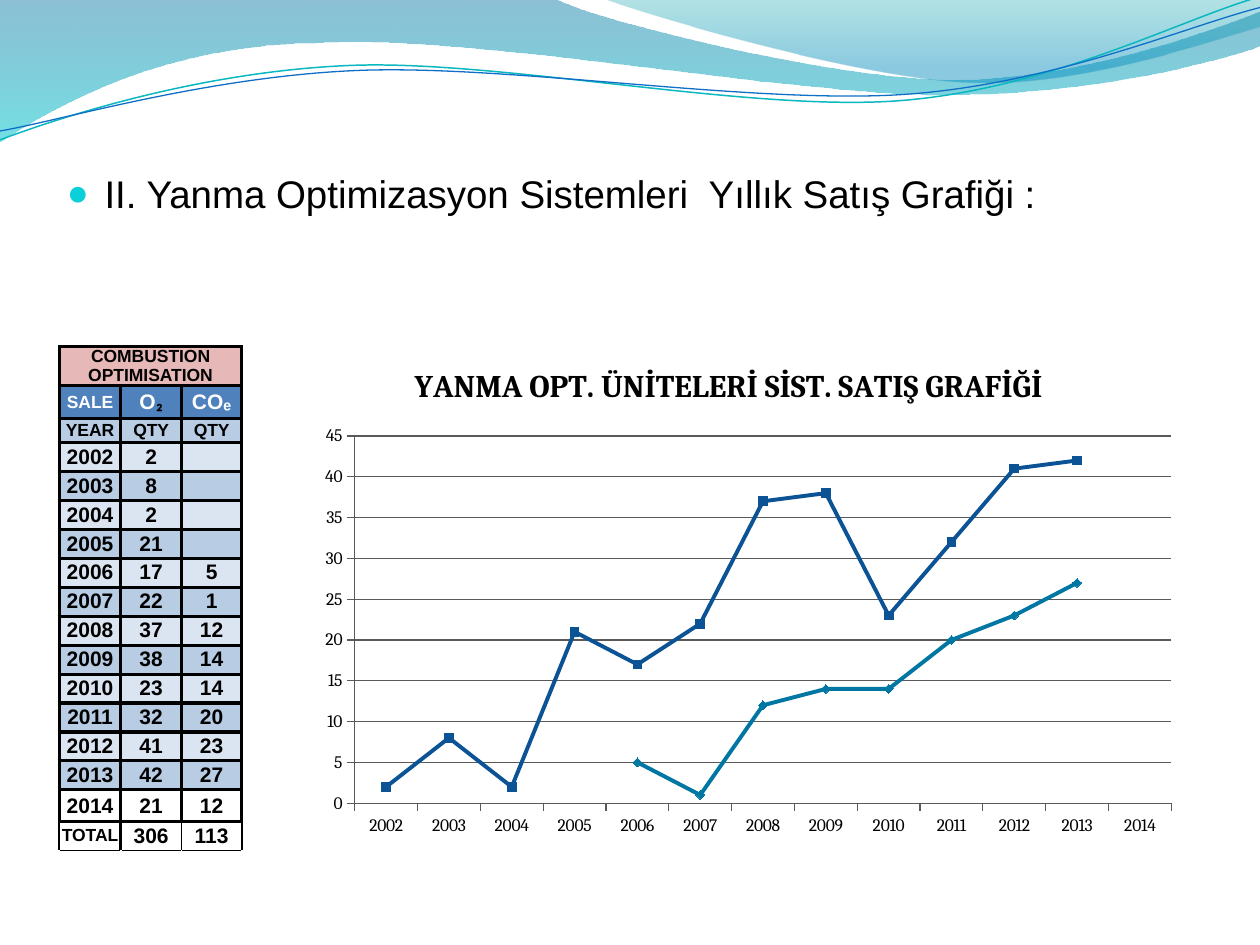
from dataclasses import dataclass
from math import cos, radians, sin

from lxml import etree
from pptx import Presentation
from pptx.chart.data import CategoryChartData
from pptx.dml.color import RGBColor
from pptx.enum.chart import XL_CHART_TYPE, XL_MARKER_STYLE, XL_TICK_MARK
from pptx.enum.text import MSO_ANCHOR, MSO_AUTO_SIZE, PP_ALIGN
from pptx.oxml.ns import qn
from pptx.util import Inches, Pt

LINE_MARKERS = XL_CHART_TYPE.LINE_MARKERS
SQUARE, DIAMOND = XL_MARKER_STYLE.SQUARE, XL_MARKER_STYLE.DIAMOND
OUTSIDE = XL_TICK_MARK.OUTSIDE
CENTER, TOP, MIDDLE = PP_ALIGN.CENTER, MSO_ANCHOR.TOP, MSO_ANCHOR.MIDDLE


@dataclass(frozen=True)
class Theme:
    font: str = "Arial"
    symbol_font: str = "Calibri"
    chart_font: str = "Cambria"
    text: str = "000000"
    white: str = "FFFFFF"
    bullet: str = "0BD0D9"
    pink: str = "E6B9B8"
    header: str = "4F81BD"
    band_dark: str = "B8CCE4"
    band_light: str = "DBE5F1"
    axis: str = "595959"
    series: tuple = ("0B5395", "0076A3")
    ribbons: tuple = ("0AB8BF", "0F6FC6")
    wave_left: tuple = ((0, "0074A1", 45), (1, "00C6CF", 55))
    wave_right: tuple = ((0, "00A1A9", 30), (0.8, "008BBF", 45))
    heading_size: int = 22
    chart_title_size: int = 18
    cell_size: int = 12
    small_size: int = 10
    empty_size: int = 8


def rgb(value):
    return RGBColor.from_string(value)


def sub(parent, tag, **attrs):
    return etree.SubElement(parent, qn(tag), attrs)


def pairs(segment):
    return list(zip(segment[::2], segment[1::2]))


def turn(segment, angle, cx, cy):
    """The points of a segment, turned around a centre."""
    c, d = cos(radians(angle)), sin(radians(angle))
    return [v for x, y in pairs(segment)
            for v in (cx + (x - cx) * c - (y - cy) * d, cy + (x - cx) * d + (y - cy) * c)]


class SlideBuilder:
    def __init__(self, slide, theme):
        self.s, self.theme = slide, theme

    def outline(self, segments, close):
        """Start point, then lines (x, y) and curves (x1, y1, x2, y2, x3, y3)."""
        ends = [tuple(map(Inches, seg[-2:])) for seg in segments]
        fb = self.s.shapes.build_freeform(*ends[0])
        fb.add_line_segments(ends[1:], close=close)
        sp = fb.convert_to_shape()
        sp.shadow.inherit = False
        lines = list(sp._element.iter(qn("a:lnTo")))
        for line, seg in zip(lines, segments[1:]):
            if len(seg) == 6:
                curve = etree.Element(qn("a:cubicBezTo"))
                for x, y in pairs(seg):
                    sub(curve, "a:pt", x=str(Inches(x) - sp.left), y=str(Inches(y) - sp.top))
                line.getparent().replace(line, curve)
        return sp

    def wave(self, segments, stops):
        sp = self.outline(segments, True)
        sp.line.fill.background()
        sp.fill.gradient()
        sp.fill.gradient_angle = 270
        for stop, (pos, color, _) in zip(sp.fill.gradient_stops, stops):
            stop.position = pos
            stop.color.rgb = rgb(color)
        for clr, (_, _, opacity) in zip(sp._element.spPr.iter(qn("a:srgbClr")), stops):
            sub(clr, "a:alpha", val=str(opacity * 1000))

    def ribbon(self, segments, color, width, center, tilt=2.7):
        sp = self.outline([turn(seg, tilt, *center) for seg in segments], False)
        sp.rotation = 360 - tilt
        sp.fill.background()
        sp.line.color.rgb = rgb(color)
        sp.line.width = Pt(width)

    def run(self, p, text, size, color, font=None, bold=False):
        r = p.add_run()
        r.text = text
        f = r.font
        f.name, f.size, f.bold = font or self.theme.font, Pt(size), bold
        f.color.rgb = rgb(color)

    def bullet(self, text, x, y, w, h):
        sp = self.s.placeholders[1]
        sp.left, sp.top, sp.width, sp.height = map(Inches, (x, y, w, h))
        tf = sp.text_frame
        tf.auto_size, tf.vertical_anchor = MSO_AUTO_SIZE.NONE, TOP
        tf.margin_top, tf.margin_bottom = Inches(0.28), 0
        p = tf.paragraphs[0]
        p.space_before = Pt(0)
        pPr = p._p.get_or_add_pPr()
        pPr.set("marL", str(Inches(0.3)))
        pPr.set("indent", str(-Inches(0.3)))
        sub(sub(pPr, "a:buClr"), "a:srgbClr", val=self.theme.bullet)
        sub(pPr, "a:buSzPct", val="95000")
        sub(pPr, "a:buFont", typeface=self.theme.font)
        sub(pPr, "a:buChar", char="●")
        self.run(p, text, self.theme.heading_size, self.theme.text)

    def table(self, x, y, cols, rows):
        frame = self.s.shapes.add_table(len(rows), len(cols), Inches(x), Inches(y),
                                        Inches(sum(cols)), Inches(sum(rows)))
        t = frame.table
        t.first_row = t.horz_banding = False
        for col, w in zip(t.columns, cols):
            col.width = Inches(w)
        for row, h in zip(t.rows, rows):
            row.height = Inches(h)
        for cell in t.iter_cells():
            cell.margin_left = cell.margin_right = cell.margin_top = cell.margin_bottom = 0
            cell.vertical_anchor = MIDDLE
            cell.fill.background()
            sub(cell.text_frame.paragraphs[0]._p, "a:endParaRPr",
                sz=str(self.theme.empty_size * 100))
        return t

    def borders(self, cell, **widths):
        tcPr = cell._tc.get_or_add_tcPr()
        for i, (side, width) in enumerate(widths.items()):
            ln = etree.Element(qn("a:ln" + side), w=str(Pt(width)))
            sub(sub(ln, "a:solidFill"), "a:srgbClr", val=self.theme.text)
            tcPr.insert(i, ln)

    def cell(self, cell, runs, fill=None, widths=(2, 2, 2, 2)):
        self.borders(cell, **dict(zip("LRTB", widths)))
        if fill:
            cell.fill.solid()
            cell.fill.fore_color.rgb = rgb(fill)
        p = cell.text_frame.paragraphs[0]
        p.alignment = CENTER
        for text, size, color, font in runs:
            self.run(p, text, size, color, font, True)

    def place(self, parent, **values):
        """Manual layout of a chart part, in fractions of the chart."""
        for old in parent.findall(qn("c:layout")):
            parent.remove(old)
        layout = etree.Element(qn("c:layout"))
        manual = sub(layout, "c:manualLayout")
        for tag, val in values.items():
            sub(manual, "c:" + tag, val=str(val))
        parent.insert(1 if parent.tag == qn("c:title") else 0, layout)

    def line_chart(self, title, cats, series, x, y, w, h):
        th, data = self.theme, CategoryChartData()
        data.categories = cats
        for name, vals in series:
            data.add_series(name, vals)
        ch = self.s.shapes.add_chart(LINE_MARKERS, *map(Inches, (x, y, w, h)), data).chart
        ch.has_legend = False
        ch.font.name, ch.font.size = th.chart_font, Pt(th.small_size)
        ch.font.color.rgb = rgb(th.text)
        self.run(ch.chart_title.text_frame.paragraphs[0], title, th.chart_title_size,
                 th.text, th.chart_font, True)
        self.place(ch.chart_title._element, xMode="edge", yMode="edge", x=0.15, y=0.03)
        self.place(ch._chartSpace.chart.plotArea, layoutTarget="inner", xMode="edge",
                   yMode="edge", x=0.09, y=0.182, w=0.904, h=0.725)
        val = ch.value_axis
        val.minimum_scale, val.maximum_scale, val.major_unit = 0, 45, 5
        for axis in (ch.category_axis, val):
            axis.major_tick_mark = OUTSIDE
        for fmt in (ch.category_axis.format, val.format, val.major_gridlines.format):
            fmt.line.color.rgb = rgb(th.axis)
            fmt.line.width = Pt(0.75)
        ch.plots[0].vary_by_categories = False
        for ser, color, style in zip(ch.plots[0].series, th.series, (SQUARE, DIAMOND)):
            ser.smooth = False
            ser.marker.style, ser.marker.size = style, 5
            ser.marker.format.fill.solid()
            ser.marker.format.fill.fore_color.rgb = rgb(color)
            for line in (ser.format.line, ser.marker.format.line):
                line.color.rgb = rgb(color)
            ser.format.line.width = Pt(2.25)


def main():
    prs = Presentation()
    prs.slide_width, prs.slide_height = Inches(10), Inches(7.5)
    s = prs.slides.add_slide(prs.slide_layouts[1])
    s.shapes.title._element.getparent().remove(s.shapes.title._element)
    th = Theme()
    b = SlideBuilder(s, th)

    # Decorative waves along the top
    b.wave([(0, -0.01), (4.4, -0.01), (4.76, 0.17, 6.64, 0.63, 7.58, 0.63), (8.53, 0.63, 9.58, 0.26, 10, 0.09),
            (10.01, 0.36), (9.83, 0.44, 8.7, 0.76, 7.46, 0.75), (6.22, 0.75, 3.82, 0.28, 2.57, 0.34),
            (1.29, 0.35, 0.46, 0.83, -0.01, 1.13)], th.wave_left)
    b.wave([(4.79, -0.01), (5.09, 0.11, 6.82, 0.62, 7.69, 0.65), (8.56, 0.69, 9.61, 0.32, 10, 0.21),
            (10, 0)], th.wave_right)
    b.ribbon([(0, 1.11), (0.48, 0.93, 1.58, 0.57, 2.77, 0.52), (3.95, 0.47, 5.93, 0.89, 7.13, 0.8),
              (8.33, 0.71, 9.38, 0.15, 9.98, -0.02)], th.ribbons[0], 0.85, (4.99, 0.58))
    b.ribbon([(0, 1.04), (0.47, 0.96, 1.64, 0.61, 2.83, 0.56), (4.03, 0.51, 5.97, 0.83, 7.17, 0.75),
              (8.36, 0.67, 9.41, 0.21, 10, 0.06)], th.ribbons[1], 0.75, (5, 0.59))

    # Heading
    b.bullet("II. Yanma Optimizasyon Sistemleri  Yıllık Satış Grafiği :", 0.43, 1.07, 9, 0.61)

    # Sales table, with an empty margin column and margin rows
    years = [str(year) for year in range(2002, 2015)]
    o2 = [2, 8, 2, 21, 17, 22, 37, 38, 23, 32, 41, 42, 21]
    co = [None] * 4 + [5, 1, 12, 14, 14, 20, 23, 27, 12]
    t = b.table(0.27, 2.57, [0.2, 0.49, 0.48, 0.48],
                [0.18, 0.27, 0.26, 0.19] + [0.23] * 12 + [0.25, 0.23, 0.17])
    for row in range(1, 18):
        b.borders(t.cell(row, 0), R=1 if row == 17 else 2)
    for col in range(1, 4):
        b.borders(t.cell(0, col), B=2)
        b.borders(t.cell(18, col), T=1)
    small = lambda text, color=th.text: [(text, th.small_size, color, th.font)]
    big = lambda text, color=th.text: [(text, th.cell_size, color, th.font)]
    for col, runs in enumerate((small("COMBUSTION OPTIMISATION"), [], []), 1):
        b.cell(t.cell(1, col), runs, th.pink)
    t.cell(1, 1).merge(t.cell(1, 3))
    subscript = [("₂", th.cell_size, th.text, th.symbol_font)]
    heads = (small("SALE", th.white), big("O", th.white) + subscript, big("COₑ", th.white))
    for col, runs in enumerate(heads, 1):
        b.cell(t.cell(2, col), runs, th.header)
    for col, text in enumerate(("YEAR", "QTY", "QTY"), 1):
        b.cell(t.cell(3, col), small(text), th.band_dark)
    for i, values in enumerate(zip(years, o2, co)):
        fill = None if i == 12 else (th.band_light, th.band_dark)[i % 2]
        for col, value in enumerate(values, 1):
            b.cell(t.cell(4 + i, col), [] if value is None else big(str(value)), fill)
    totals = ((small("TOTAL"), (1, 2, 2, 1)), (big("306"), (2, 1, 2, 1)), (big("113"), (1, 1, 2, 1)))
    for col, (runs, widths) in enumerate(totals, 1):
        b.cell(t.cell(17, col), runs, widths=widths)

    # Sales chart: the last year has no points yet
    b.line_chart("YANMA OPT. ÜNİTELERİ SİST. SATIŞ GRAFİĞİ", years,
                 [("Series 1", o2[:-1] + [None]), ("Series 2", co[:-1] + [None])], 2.17, 2.73, 7.17, 4.02)
    prs.save("out.pptx")


if __name__ == "__main__":
    main()
